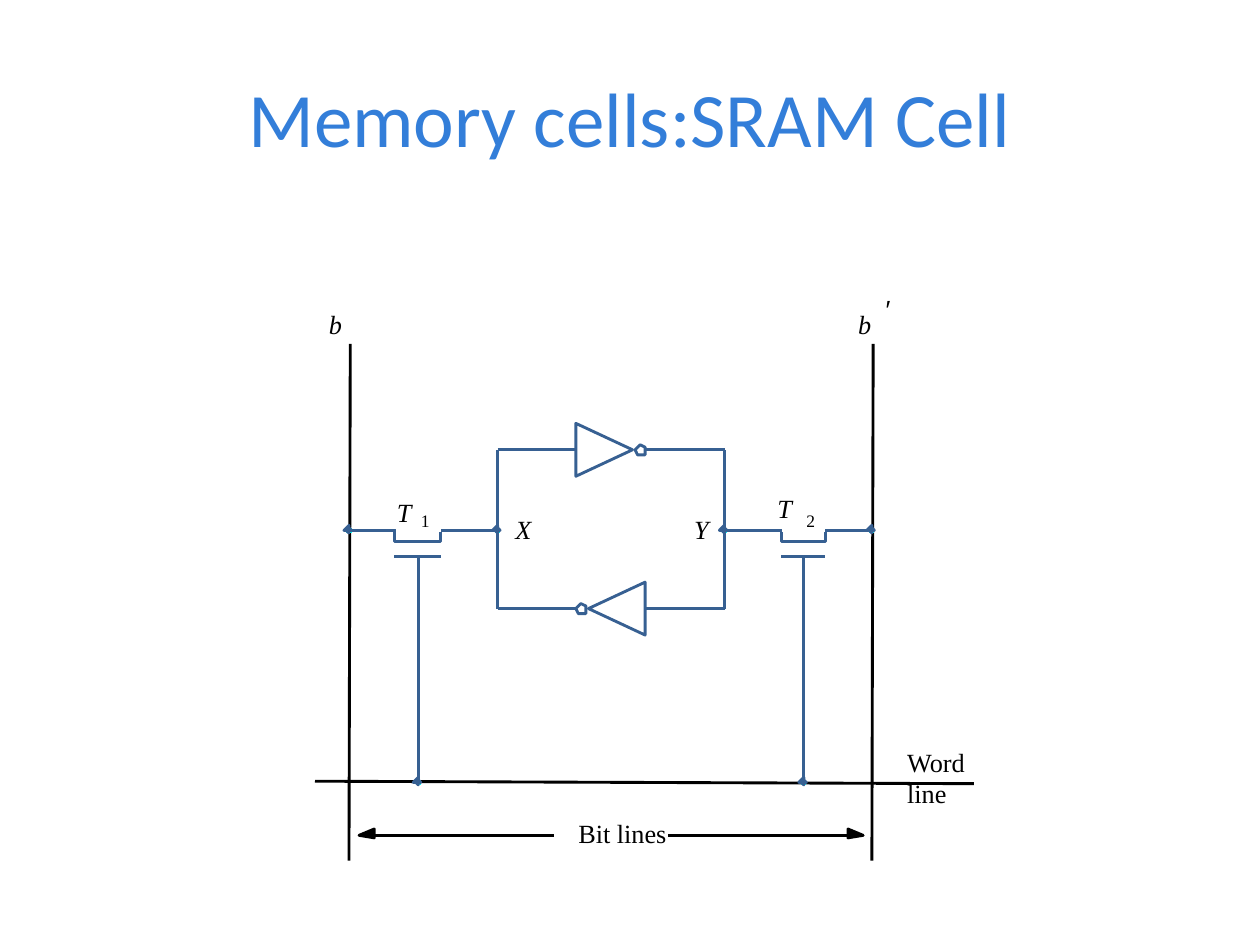
from lxml.etree import SubElement
from pptx import Presentation
from pptx.dml.color import RGBColor
from pptx.enum.shapes import MSO_CONNECTOR, MSO_SHAPE
from pptx.enum.text import MSO_ANCHOR, PP_ALIGN
from pptx.oxml.ns import qn
from pptx.util import Inches, Pt

TITLE_BLUE = RGBColor(0x33, 0x7E, 0xD9)
WIRE_BLUE = RGBColor(0x37, 0x60, 0x92)
CYAN = RGBColor(0x00, 0xFF, 0xFF)
BLACK = RGBColor(0x00, 0x00, 0x00)
WHITE = RGBColor(0xFF, 0xFF, 0xFF)
SERIF = "Times New Roman"
STROKE = 1.63

# Columns and rows of the circuit, in inches
BIT_LEFT, BIT_RIGHT = 2.77, 6.92
NODE_X, NODE_Y = 3.95, 5.75
INVERTER_LEFT, INVERTER_RIGHT = 4.57, 5.12
TOP_ROW, MIDDLE_ROW, BOTTOM_ROW = 3.57, 4.21, 4.83
GATE_ROW, WORD_ROW, SPAN_ROW = 4.42, 6.2, 6.63
CHANNEL_HEIGHT = 0.09

deck = Presentation()
deck.slide_width, deck.slide_height = Inches(10), Inches(7.5)
page = deck.slides.add_slide(deck.slide_layouts[6])


def draw_line(x1, y1, x2, y2, color=WIRE_BLUE, width=STROKE):
    line = page.shapes.add_connector(
        MSO_CONNECTOR.STRAIGHT, Inches(x1), Inches(y1), Inches(x2), Inches(y2))
    line.line.color.rgb = color
    line.line.width = Pt(width)
    SubElement(line._element.spPr, qn("a:effectLst"))


def draw_outline(x, y, offsets, stroke=WIRE_BLUE, fill=None):
    """Draw a closed polygon whose corners are offsets from (x, y)."""
    corners = [(Inches(x + dx), Inches(y + dy)) for dx, dy in offsets]
    builder = page.shapes.build_freeform(*corners[0], scale=1.0)
    builder.add_line_segments(corners[1:], close=True)
    shape = builder.convert_to_shape()
    shape.shadow.inherit = False
    if fill is None:
        shape.fill.background()
    else:
        shape.fill.solid()
        shape.fill.fore_color.rgb = fill
    if stroke is None:
        shape.line.fill.background()
    else:
        shape.line.color.rgb = stroke
        shape.line.width = Pt(STROKE)


# Title
box = page.shapes.add_textbox(Inches(0.5), Inches(0.3), Inches(9), Inches(1.25))
box.text_frame.word_wrap = True
box.text_frame.vertical_anchor = MSO_ANCHOR.MIDDLE
para = box.text_frame.paragraphs[0]
para.text = "Memory cells:SRAM Cell"
para.alignment = PP_ALIGN.CENTER
para.font.name, para.font.size = "Calibri", Pt(44)
para.font.color.rgb = TITLE_BLUE

# Bit lines and word line
for x in (BIT_LEFT, BIT_RIGHT):
    draw_line(x, 6.83, x + 0.01, 2.73, BLACK)
draw_line(7.73, WORD_ROW + 0.02, 2.5, WORD_ROW, BLACK)

# Span arrows pointing at the bit lines
ARROWHEAD = [(0, -0.05), (0.12, 0), (0, 0.02)]
for x, inner, direction in ((2.97, 4.4, -1), (6.73, 5.3, 1)):
    draw_line(x, SPAN_ROW, inner, SPAN_ROW, BLACK)
    draw_outline(x, SPAN_ROW, [(direction * dx, dy) for dx, dy in ARROWHEAD],
                 BLACK, BLACK)

# Cross-coupled inverters
for x in (NODE_X, NODE_Y):
    draw_line(x, BOTTOM_ROW, x, TOP_ROW)
BUBBLE = [(0, -0.04), (-0.02, -0.02), (-0.04, 0), (-0.02, 0.04),
          (0.04, 0.04), (0.04, -0.02)]
for row, base, direction, bubble in ((TOP_ROW, INVERTER_LEFT, 1, 5.08),
                                     (BOTTOM_ROW, INVERTER_RIGHT, -1, 4.61)):
    draw_line(NODE_X, row, INVERTER_LEFT, row)
    draw_line(INVERTER_RIGHT, row, NODE_Y, row)
    draw_outline(base, row, [(0, -0.21), (direction * 0.45, 0), (0, 0.21)])
    draw_outline(bubble, row, BUBBLE, WIRE_BLUE, WHITE)

# Access transistors
for start, left, width, end, gate in ((BIT_LEFT, 3.13, 0.37, NODE_X, 3.32),
                                      (NODE_Y, 6.2, 0.35, BIT_RIGHT, 6.38)):
    right = left + width
    channel = page.shapes.add_shape(
        MSO_SHAPE.RECTANGLE, Inches(left), Inches(MIDDLE_ROW),
        Inches(width), Inches(CHANNEL_HEIGHT))
    channel.shadow.inherit = False
    channel.fill.background()
    channel.line.color.rgb = WIRE_BLUE
    channel.line.width = Pt(STROKE)
    draw_line(left + 0.01, MIDDLE_ROW, right + 0.08, MIDDLE_ROW, WHITE, 1.5)
    draw_line(start, MIDDLE_ROW, left, MIDDLE_ROW)
    draw_line(right, MIDDLE_ROW, end, MIDDLE_ROW)
    draw_line(left, GATE_ROW, right, GATE_ROW)
    draw_line(gate, GATE_ROW, gate, WORD_ROW)

# Junction dots
SQUARE = [(-0.02, -0.02), (-0.02, 0.02), (0.02, 0.02), (0.02, -0.02)]
DIAMOND = [(0, -0.04), (-0.04, 0), (-0.02, 0), (0, 0.02),
           (0, 0), (0.02, 0), (0, -0.02)]
junctions = [(x, MIDDLE_ROW) for x in (BIT_LEFT, NODE_X, NODE_Y, BIT_RIGHT)]
junctions += [(x, WORD_ROW + 0.01) for x in (3.32, 6.38)]
for x, y in junctions:
    draw_outline(x, y, SQUARE, None, CYAN)
    draw_outline(x, y, DIAMOND, WIRE_BLUE, WIRE_BLUE)

# Labels: text, left, top, width, size, italic, font
labels = [
    ("b", 2.61, 2.45, 0.29, 15, True, SERIF),
    ("b", 6.81, 2.45, 0.29, 15, True, SERIF),
    ("′", 7.03, 2.33, 0.14, 15, False, "Arial"),
    ("T", 3.15, 3.94, 0.29, 15, True, SERIF),
    ("1", 3.34, 4.05, 0.14, 10, False, SERIF),
    ("T", 6.17, 3.91, 0.29, 15, True, SERIF),
    ("2", 6.4, 4.05, 0.14, 10, False, SERIF),
    ("X", 4.09, 4.07, 0.33, 15, True, SERIF),
    ("Y", 5.51, 4.07, 0.33, 15, True, SERIF),
    ("Word line", 7.2, 5.92, 0.8, 15, False, SERIF),
    ("Bit lines", 4.59, 6.49, 0.72, 15, False, SERIF),
]
for text, left, top, width, size, italic, font in labels:
    box = page.shapes.add_textbox(
        Inches(left), Inches(top), Inches(width), Inches(size / 50))
    frame = box.text_frame
    frame.word_wrap = True
    frame.margin_left = frame.margin_right = 0
    frame.margin_top = frame.margin_bottom = 0
    para = frame.paragraphs[0]
    para.text = text
    para.font.name, para.font.size = font, Pt(size)
    para.font.italic = italic
    para.font.color.rgb = BLACK

deck.save("out.pptx")
